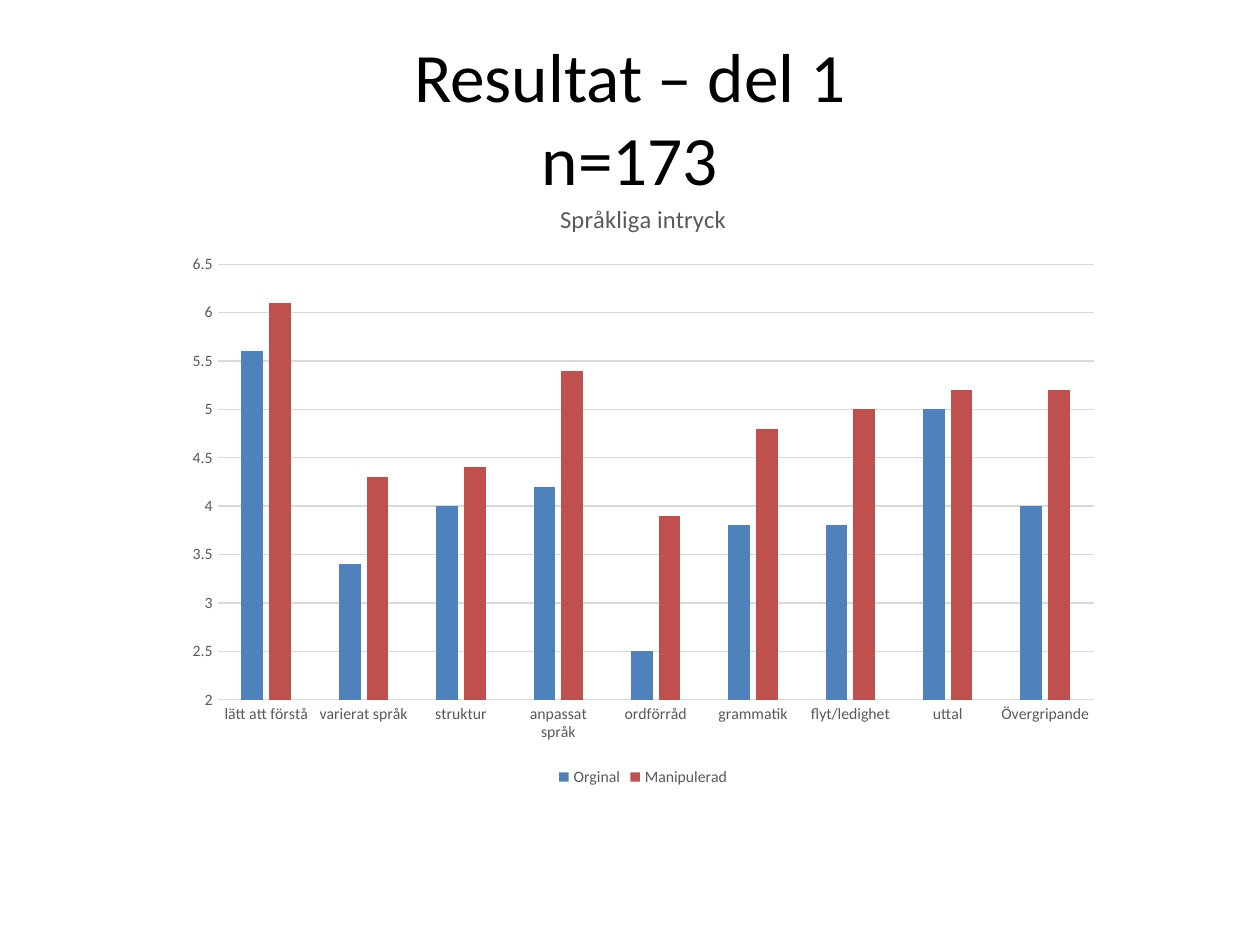
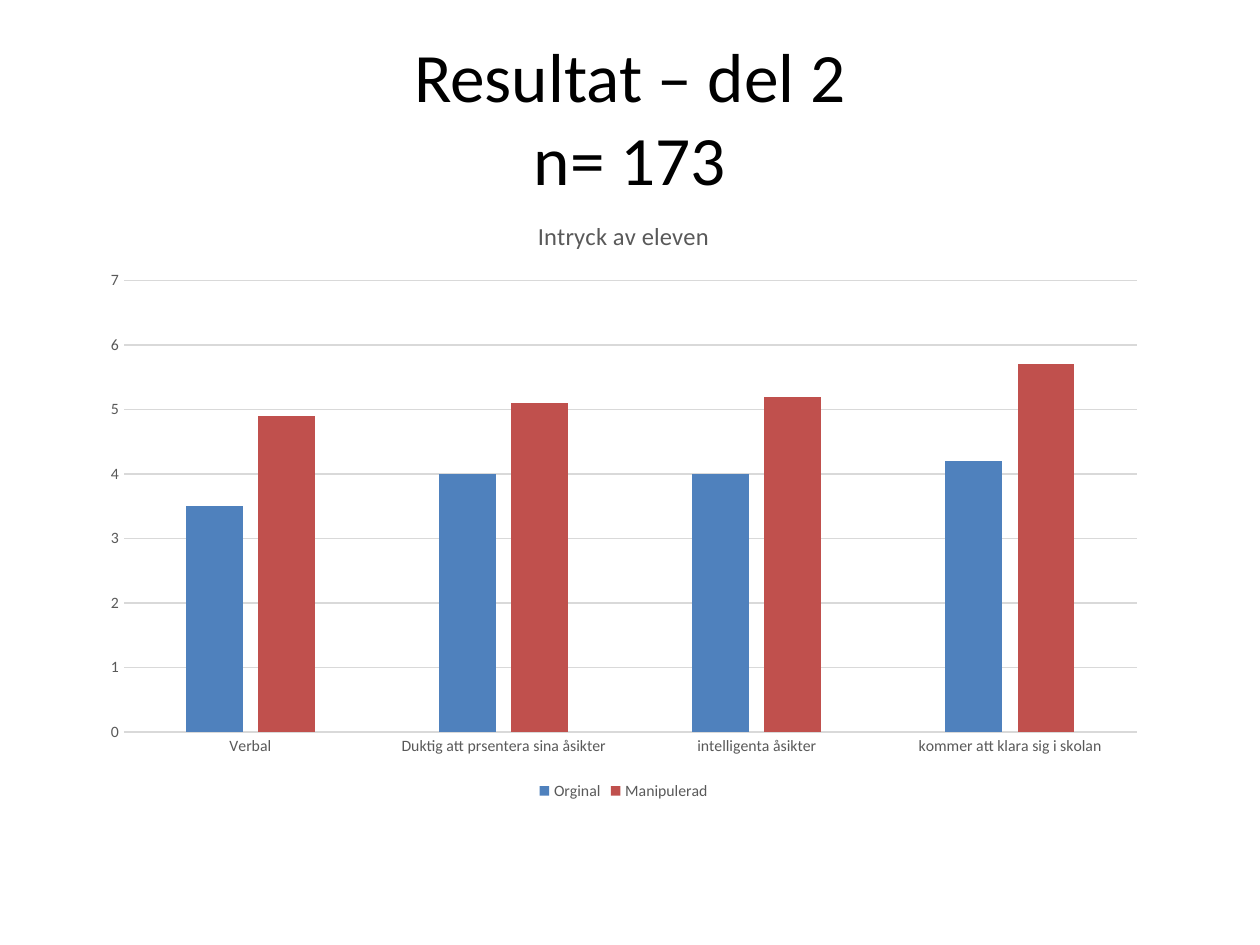
import pptx
import pptx.util
import pptx.dml.color
import pptx.chart.data
import pptx.enum.chart
import pptx.enum.text

Inches = pptx.util.Inches
Pt = pptx.util.Pt

FONT = "Calibri"
COLOURS = {
    "title": "000000",
    "label": "595959",
    "rule": "D9D9D9",
    "Orginal": "4F81BD",
    "Manipulerad": "C0504D",
}

RESULTS = [
    {
        "heading": "Resultat – del 1\vn=173",
        "chart_title": "Språkliga intryck",
        "place": (1.38, 1.42, 7.45, 4.86),
        "scale": {"minimum_scale": 2, "maximum_scale": 6.5, "major_unit": 0.5},
        "categories": [
            "lätt att förstå", "varierat språk", "struktur", "anpassat språk",
            "ordförråd", "grammatik", "flyt/ledighet", "uttal", "Övergripande",
        ],
        "series": {
            "Orginal": [5.6, 3.4, 4, 4.2, 2.5, 3.8, 3.8, 5, 4],
            "Manipulerad": [6.1, 4.3, 4.4, 5.4, 3.9, 4.8, 5, 5.2, 5.2],
        },
    },
    {
        "heading": "Resultat – del 2\vn= 173",
        "chart_title": "Intryck av eleven",
        "place": (0.71, 1.55, 8.48, 4.84),
        "scale": {"minimum_scale": 0, "maximum_scale": 7, "major_unit": 1},
        "categories": [
            "Verbal", "Duktig att prsentera sina åsikter",
            "intelligenta åsikter", "kommer att klara sig i skolan",
        ],
        "series": {
            "Orginal": [3.5, 4, 4, 4.2],
            "Manipulerad": [4.9, 5.1, 5.2, 5.7],
        },
    },
]


def set_values(target, values):
    for name, value in values.items():
        setattr(target, name, value)


def colour(name):
    return pptx.dml.color.RGBColor.from_string(COLOURS[name])


def style_font(font, size, colour_name):
    set_values(font, {"name": FONT, "size": Pt(size), "bold": False})
    font.color.rgb = colour(colour_name)


def style_rule(line):
    line.width = Pt(0.75)
    line.color.rgb = colour("rule")


def add_heading(page, text):
    box = page.shapes.add_textbox(Inches(0.5), Inches(0.3), Inches(9), Inches(1.25))
    set_values(box.text_frame, {
        "word_wrap": True,
        "auto_size": pptx.enum.text.MSO_AUTO_SIZE.NONE,
        "vertical_anchor": pptx.enum.text.MSO_ANCHOR.MIDDLE,
    })
    para = box.text_frame.paragraphs[0]
    para.text = text
    para.alignment = pptx.enum.text.PP_ALIGN.CENTER
    style_font(para.font, 39.6, "title")
    for span in para.runs:
        style_font(span.font, 39.6, "title")


def style_axes(chart, scale):
    for axis in (chart.category_axis, chart.value_axis):
        set_values(axis, {
            "major_tick_mark": pptx.enum.chart.XL_TICK_MARK.NONE,
            "minor_tick_mark": pptx.enum.chart.XL_TICK_MARK.NONE,
        })
        style_font(axis.tick_labels.font, 9, "label")
    style_rule(chart.category_axis.format.line)
    value_axis = chart.value_axis
    set_values(value_axis, {"has_major_gridlines": True, **scale})
    value_axis.format.line.fill.background()
    style_rule(value_axis.major_gridlines.format.line)


def add_column_chart(page, result):
    data = pptx.chart.data.CategoryChartData()
    data.categories = result["categories"]
    for name, values in result["series"].items():
        data.add_series(name, values)
    chart = page.shapes.add_chart(
        pptx.enum.chart.XL_CHART_TYPE.COLUMN_CLUSTERED,
        *map(Inches, result["place"]), data,
    ).chart
    style_font(chart.font, 10, "title")

    # Chart title and legend
    set_values(chart, {"has_title": True, "has_legend": True})
    para = chart.chart_title.text_frame.paragraphs[0]
    span = para.add_run()
    span.text = result["chart_title"]
    style_font(span.font, 14, "label")
    chart.chart_title.include_in_layout = False
    set_values(chart.legend, {
        "position": pptx.enum.chart.XL_LEGEND_POSITION.BOTTOM,
        "include_in_layout": False,
    })
    style_font(chart.legend.font, 9, "label")

    # Axes and columns
    style_axes(chart, result["scale"])
    plot = chart.plots[0]
    set_values(plot, {"gap_width": 219, "overlap": -27, "vary_by_categories": False})
    for series in plot.series:
        series.invert_if_negative = False
        series.format.fill.solid()
        series.format.fill.fore_color.rgb = colour(series.name)


def main():
    deck = pptx.Presentation()
    set_values(deck, {"slide_width": Inches(10), "slide_height": Inches(7.5)})
    for result in RESULTS:
        page = deck.slides.add_slide(deck.slide_layouts[6])
        add_heading(page, result["heading"])
        add_column_chart(page, result)
    deck.save("out.pptx")


if __name__ == "__main__":
    main()
